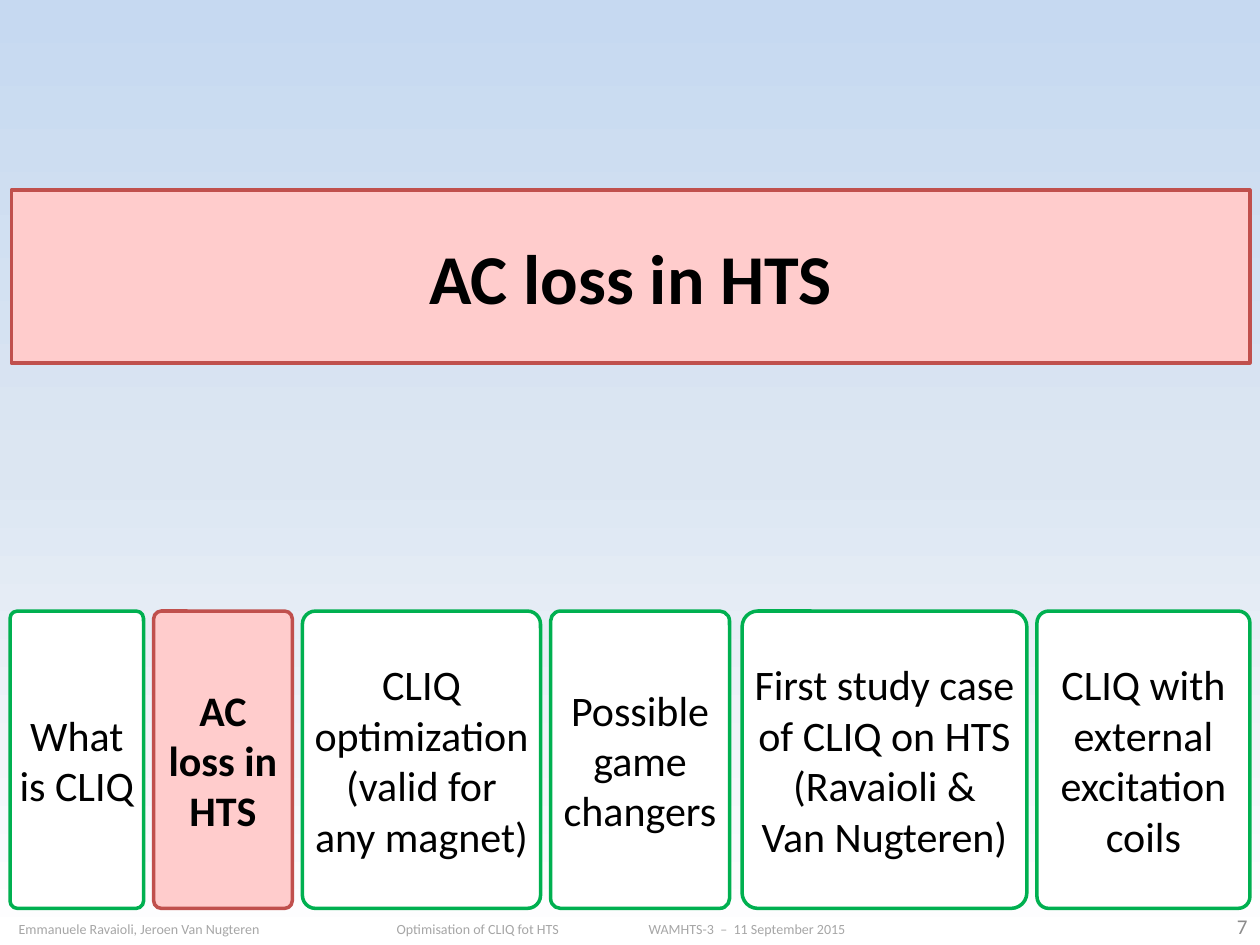
"""Build the section slide "AC loss in HTS" with its agenda strip."""
from copy import deepcopy

from pptx import Presentation
from pptx.dml.color import RGBColor
from pptx.enum.shapes import MSO_SHAPE
from pptx.enum.text import MSO_ANCHOR, PP_ALIGN
from pptx.util import Inches, Pt


def color(hex_code):
    return RGBColor.from_string(hex_code)


class SectionSlide:
    FONT = "Calibri"
    BLACK, WHITE = "000000", "FFFFFF"
    ACTIVE_FILL, ACTIVE_LINE, TOPIC_LINE = "FFCCCC", "C0504D", "00B050"

    def __init__(self, presentation):
        self.slide = presentation.slides.add_slide(presentation.slide_layouts[6])

    def background(self, gradient):
        fill = self.slide.background.fill
        fill.gradient()
        fill.gradient_angle = 270
        stop_list = self.slide.element.xpath(".//a:gsLst")[0]
        stop_list.append(deepcopy(stop_list[-1]))
        for stop, (position, hex_code) in zip(fill.gradient_stops, gradient):
            stop.color.rgb = color(hex_code)
            stop.position = position

    def set_text(self, frame, text, size, hex_code, align, bold=False, space_after=None):
        frame.word_wrap = True
        frame.vertical_anchor = MSO_ANCHOR.MIDDLE
        frame.text = text
        for paragraph in frame.paragraphs:
            paragraph.alignment = align
            if space_after is not None:
                paragraph.space_after = Pt(space_after)
            for run in paragraph.runs:
                run.font.name = self.FONT
                run.font.size = Pt(size)
                run.font.bold = bold
                run.font.color.rgb = color(hex_code)

    def box(self, preset, bounds, text, size, active, space_after=None):
        shape = self.slide.shapes.add_shape(preset, *map(Inches, bounds))
        shape.shadow.inherit = False
        shape.fill.solid()
        shape.fill.fore_color.rgb = color(self.ACTIVE_FILL if active else self.WHITE)
        shape.line.color.rgb = color(self.ACTIVE_LINE if active else self.TOPIC_LINE)
        shape.line.width = Pt(2)
        frame = shape.text_frame
        frame.margin_left = frame.margin_right = Inches(0.1 if active else 0.04)
        self.set_text(frame, text, size, self.BLACK, PP_ALIGN.CENTER, active, space_after)
        return shape

    def banner(self, bounds, text):
        self.box(MSO_SHAPE.RECTANGLE, bounds, text, 40, active=True)

    def topic(self, left, width, text, active, space_after):
        card = self.box(MSO_SHAPE.ROUNDED_RECTANGLE, (left, 4.85, width, 2.36),
                        text, 24, active, space_after)
        card.adjustments[0] = 0.055

    def label(self, bounds, text, size, hex_code, align):
        frame = self.slide.shapes.add_textbox(*map(Inches, bounds)).text_frame
        self.set_text(frame, text, size, hex_code, align)


def main():
    presentation = Presentation()
    presentation.slide_width = Inches(10)
    presentation.slide_height = Inches(7.5)

    section = SectionSlide(presentation)
    section.background([(0, "C6D9F1"), (0.5, "DCE6F2"), (1, "FFFFFF")])
    title = "AC loss in HTS"
    section.banner((0.09, 1.51, 9.83, 1.37), title)
    section.label((9.41, 7.21, 0.59, 0.28), "7", 12, "8C8C8C", PP_ALIGN.RIGHT)
    section.label(
        (0.05, 7.29, 9.83, 0.17),
        "Emmanuele Ravaioli, Jeroen Van Nugteren \t\t\tOptimisation of CLIQ fot HTS"
        "\t\tWAMHTS-3  –  11 September 2015",
        8, "A6A6A6", PP_ALIGN.LEFT)

    topics = [
        (0.08, 1.06, "What is CLIQ", 6),
        (1.22, 1.10, title, None),
        (2.40, 1.89, "CLIQ optimization (valid for any magnet)", 6),
        (4.37, 1.42, "Possible\ngame changers", None),
        (5.89, 2.26, "First study case of CLIQ on HTS\n(Ravaioli &\nVan Nugteren)", None),
        (8.23, 1.69, "CLIQ with external excitation coils", None),
    ]
    for left, width, text, space_after in topics:
        section.topic(left, width, text, text == title, space_after)

    presentation.save("out.pptx")


if __name__ == "__main__":
    main()
